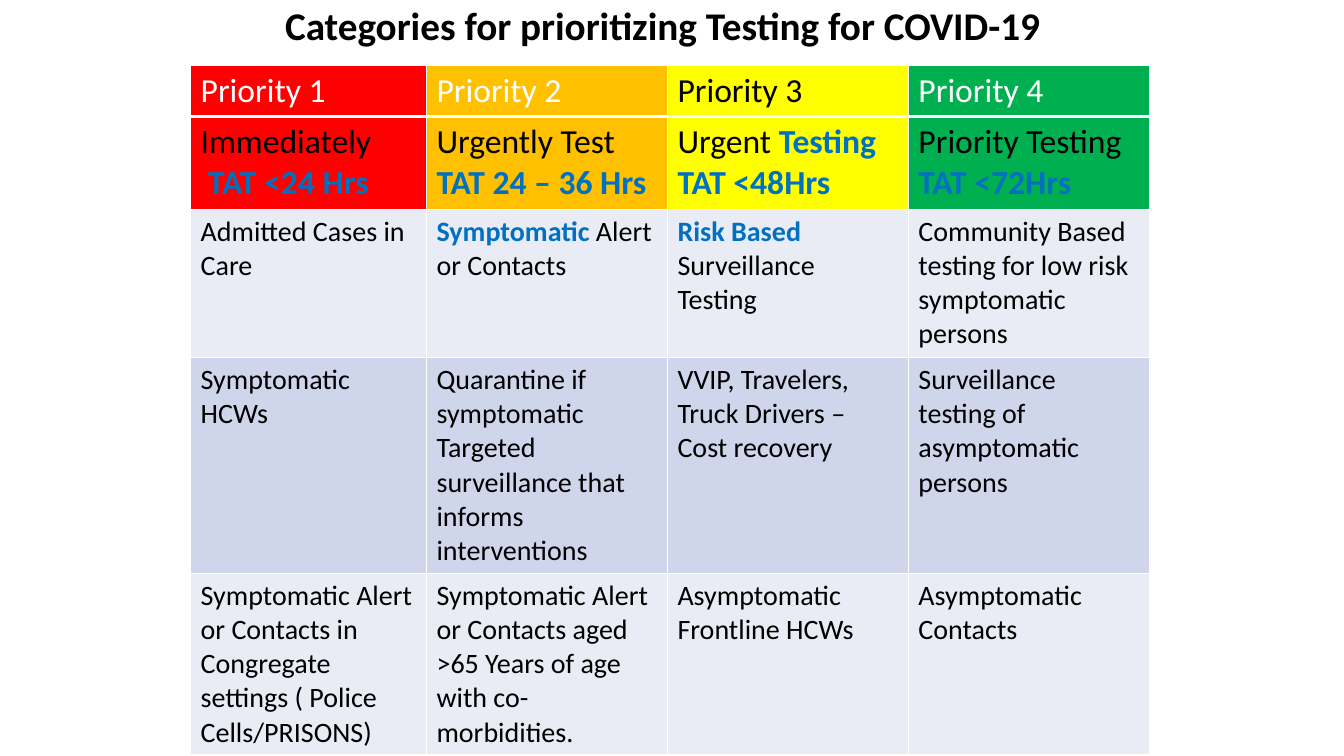
from lxml.etree import SubElement
from pptx import Presentation
from pptx.dml.color import RGBColor
from pptx.enum.text import MSO_ANCHOR as Anchor, PP_ALIGN as Align
from pptx.oxml.ns import qn
from pptx.util import Inches, Pt

BLACK, WHITE, BLUE = "000000", "FFFFFF", "0070C0"
PRIORITY_FILLS = ["FF0000", "FFC000", "FFFF00", "00B050"]
PRIORITY_COLOURS = [WHITE, WHITE, BLACK, WHITE]
PALE, DEEP = "E9EBF5", "CFD5EA"
COLUMN_WIDTHS = [2.34, 2.39, 2.39, 2.39]
ROW_HEIGHTS = [0.5, 0.92, 1.47, 2.14, 1.79]

# Each cell is a list of paragraphs; each paragraph is a list of (text, emphasised).
TURNAROUND = [
    [[("Immediately", False)], [(" ", False), ("TAT <24 Hrs", True)]],
    [[("Urgently Test", False)], [("TAT 24 – 36 Hrs", True)]],
    [[("Urgent ", False), ("Testing TAT <48Hrs", True)]],
    [[("Priority Testing", False)], [("TAT <72Hrs", True)]],
]
GROUPS = [
    [
        [[("Admitted Cases in Care", False)]],
        [[("Symptomatic", True), (" Alert or Contacts", False)]],
        [[("Risk Based ", True), ("Surveillance Testing", False)]],
        [[("Community Based testing for low risk symptomatic persons", False)]],
    ],
    [
        [[("Symptomatic HCWs", False)]],
        [[("Quarantine if symptomatic", False)],
         [("Targeted surveillance that informs interventions", False)]],
        [[("VVIP, Travelers, Truck Drivers – Cost recovery", False)]],
        [[("Surveillance testing of asymptomatic persons", False)]],
    ],
    [
        [[("Symptomatic Alert or Contacts in Congregate settings ( Police Cells/PRISONS)", False)]],
        [[("Symptomatic Alert or Contacts aged >65 Years of age with co-morbidities.", False)]],
        [[("Asymptomatic Frontline HCWs", False)]],
        [[("Asymptomatic Contacts", False)]],
    ],
]


def colour(value):
    return RGBColor.from_string(value)


def add_text(para, text, *, size, ink=BLACK, bold=False, font="Calibri"):
    span = para.add_run()
    span.text = text
    span.font.name = font
    span.font.size = Pt(size)
    span.font.bold = bold
    span.font.color.rgb = colour(ink)


class SlideBuilder:
    def __init__(self, page, border=WHITE):
        self.page = page
        self.border = border

    def title(self, text, left, top, width, height):
        box = self.page.shapes.title
        box.left, box.top = Inches(left), Inches(top)
        box.width, box.height = Inches(width), Inches(height)
        box.text_frame.vertical_anchor = Anchor.MIDDLE
        para = box.text_frame.paragraphs[0]
        para.alignment = Align.CENTER
        para.line_spacing = 0.9
        add_text(para, text, size=28, bold=True)

    def table(self, left, top, widths, heights):
        frame = self.page.shapes.add_table(
            len(heights), len(widths), Inches(left), Inches(top),
            Inches(sum(widths)), Inches(sum(heights)))
        for column, width in zip(frame.table.columns, widths):
            column.width = Inches(width)
        for row, height in zip(frame.table.rows, heights):
            row.height = Inches(height)
        return frame.table

    def cell(self, cell, paragraphs, *, fill, size, ink=BLACK, bottom=1):
        properties = cell._tc.get_or_add_tcPr()
        for side, width in (("L", 1), ("R", 1), ("T", 1), ("B", bottom)):
            line = SubElement(properties, qn(f"a:ln{side}"), w=str(Pt(width)))
            solid = SubElement(line, qn("a:solidFill"))
            SubElement(solid, qn("a:srgbClr"), val=self.border)
        cell.fill.solid()
        cell.fill.fore_color.rgb = colour(fill)
        for index, spans in enumerate(paragraphs):
            frame = cell.text_frame
            para = frame.add_paragraph() if index else frame.paragraphs[0]
            for text, emphasised in spans:
                add_text(para, text, size=size, ink=BLUE if emphasised else ink,
                         bold=emphasised)


def main():
    deck = Presentation()
    deck.slide_width, deck.slide_height = Inches(13.33), Inches(7.5)
    builder = SlideBuilder(deck.slides.add_slide(deck.slide_layouts[5]))
    builder.title("Categories for prioritizing Testing for COVID-19", 1.75, 0, 9.64, 0.55)
    table = builder.table(1.89, 0.65, COLUMN_WIDTHS, ROW_HEIGHTS)

    for column, fill in enumerate(PRIORITY_FILLS):
        heading = [[(f"Priority {column + 1}", False)]]
        builder.cell(table.cell(0, column), heading, fill=fill, size=24,
                     ink=PRIORITY_COLOURS[column], bottom=3)
        builder.cell(table.cell(1, column), TURNAROUND[column], fill=fill, size=24)

    for row, group in enumerate(GROUPS, start=2):
        for column, paragraphs in enumerate(group):
            builder.cell(table.cell(row, column), paragraphs,
                         fill=DEEP if row % 2 else PALE, size=20)

    deck.save("out.pptx")


if __name__ == "__main__":
    main()
